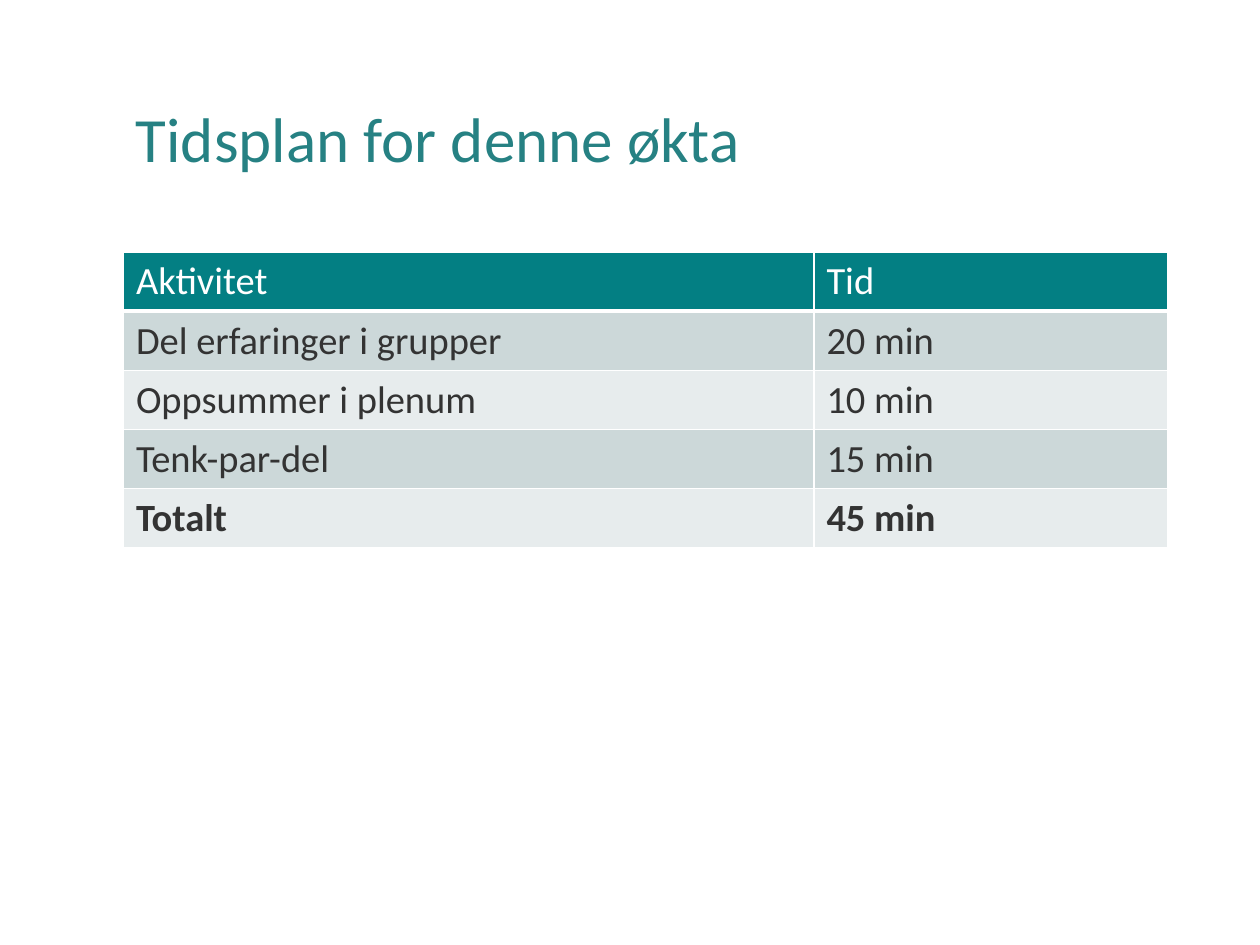
from lxml.etree import SubElement
from pptx import Presentation
from pptx.dml.color import RGBColor
from pptx.enum.text import MSO_ANCHOR
from pptx.oxml.ns import qn
from pptx.util import Inches, Pt

TITLE = "Tidsplan for denne økta"
ROWS = [
    ("Aktivitet", "Tid"),
    ("Del erfaringer i grupper", "20 min"),
    ("Oppsummer i plenum", "10 min"),
    ("Tenk-par-del", "15 min"),
    ("Totalt", "45 min"),
]
COL_WIDTHS = (5.48, 2.81)
LEFT, WIDTH, ROW_H = 0.98, sum(COL_WIDTHS), 0.47

FONT = "Calibri"
TITLE_TEAL = RGBColor(0x26, 0x81, 0x83)
HEADER_TEAL = RGBColor(0x03, 0x7F, 0x83)
BANDS = (RGBColor(0xE7, 0xEC, 0xED), RGBColor(0xCC, 0xD8, 0xD9))
INK = RGBColor(0x33, 0x33, 0x33)
WHITE = RGBColor(0xFF, 0xFF, 0xFF)


def style(p, size, color, bold=False):
    p.font.name, p.font.size, p.font.bold = FONT, Pt(size), bold
    p.font.color.rgb = color


def add_borders(cell, top, bottom):
    """Draw white cell borders; must run before the fill is set."""
    tc_pr = cell._tc.get_or_add_tcPr()
    for side, width in (("L", 1), ("R", 1), ("T", top), ("B", bottom)):
        ln = SubElement(tc_pr, qn(f"a:ln{side}"), w=str(Pt(width)))
        fill = SubElement(ln, qn("a:solidFill"))
        SubElement(fill, qn("a:srgbClr"), val=str(WHITE))


prs = Presentation()
prs.slide_width, prs.slide_height = Inches(10), Inches(7.5)
s = prs.slides.add_slide(prs.slide_layouts[6])

# Title
tf = s.shapes.add_textbox(Inches(LEFT), Inches(0.4), Inches(WIDTH), Inches(1.45)).text_frame
tf.word_wrap = True
tf.vertical_anchor = MSO_ANCHOR.MIDDLE
p = tf.paragraphs[0]
p.text, p.line_spacing = TITLE, 0.9
style(p, 36, TITLE_TEAL)

# Schedule table
table = s.shapes.add_table(len(ROWS), len(COL_WIDTHS), Inches(LEFT), Inches(2),
                           Inches(WIDTH), Inches(ROW_H * len(ROWS))).table
for col, width in zip(table.columns, COL_WIDTHS):
    col.width = Inches(width)
for i, row in enumerate(ROWS):
    header, total = i == 0, i == len(ROWS) - 1
    for j, text in enumerate(row):
        cell = table.cell(i, j)
        add_borders(cell, top=3 if i == 1 else 1, bottom=3 if header else 1)
        cell.fill.solid()
        cell.fill.fore_color.rgb = HEADER_TEAL if header else BANDS[i % 2]
        p = cell.text_frame.paragraphs[0]
        p.text = text
        style(p, 22, WHITE if header else INK, bold=total)

prs.save("out.pptx")
